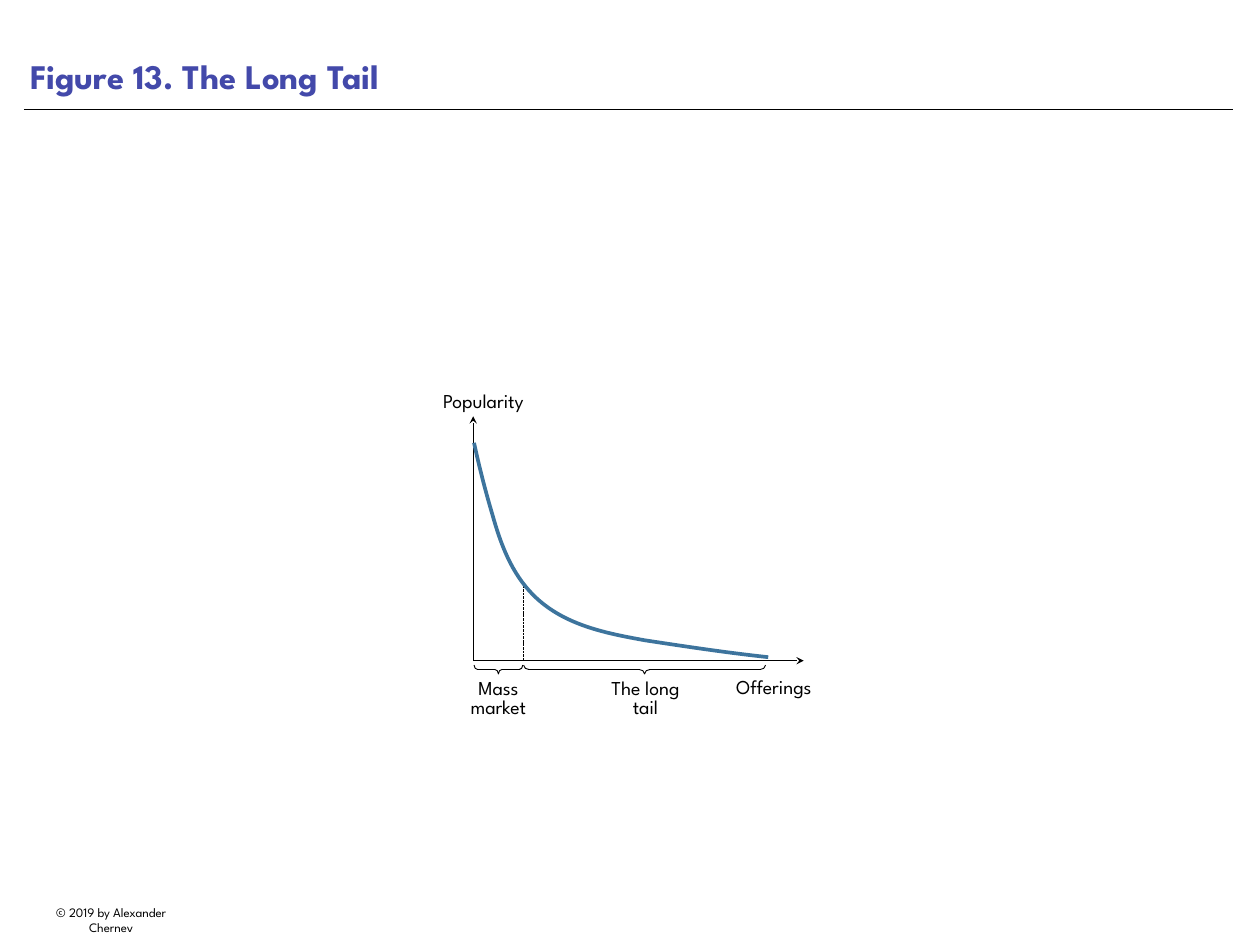
"""Build the long tail slide."""
from lxml.etree import SubElement
from pptx import Presentation
from pptx.dml.color import RGBColor
from pptx.enum.dml import MSO_LINE
from pptx.enum.shapes import MSO_CONNECTOR
from pptx.enum.text import MSO_ANCHOR, PP_ALIGN
from pptx.oxml.ns import qn
from pptx.util import Inches, Pt

COLORS = {"black": "000000", "title": "4349AA", "curve": "3D749D"}
FONT = "League Spartan"
TITLE = "Figure 13. The Long Tail"
COPYRIGHT = "© 2019 by Alexander Chernev"
LABELS = [
    ("Offerings", 8.09, 7.61, 1.07, 0.33, PP_ALIGN.RIGHT),
    ("Popularity", 4.86, 4.38, 1.19, 0.33, PP_ALIGN.CENTER),
    ("Mass market", 5.09, 7.62, 1.07, 0.56, PP_ALIGN.CENTER),
    ("The long tail", 6.75, 7.62, 1.07, 0.56, PP_ALIGN.CENTER),
]
ORIGIN = (5.34, 7.46)
AXIS_ENDS = [(5.34, 4.7), (9.07, 7.46)]
SPLIT = 5.91
CURVE_START = (8.67, 7.42)
CURVE_SEGMENTS = [
    [(8.2, 7.37), (7.74, 7.3), (7.28, 7.23)],
    [(6.84, 7.15), (6.36, 7.06), (6.02, 6.72)],
    [(5.77, 6.47), (5.65, 6.14), (5.56, 5.82)],
    [(5.48, 5.55), (5.41, 5.28), (5.35, 5)],
]
BRACES = [(SPLIT, 8.64, 0.06), (5.35, 5.9, 0.04)]
BRACE_TOP, BRACE_BAR, BRACE_TIP = 7.51, 7.56, 7.61


def color(name):
    return RGBColor.from_string(COLORS[name])


def brace_segments(left, right, radius):
    middle = (left + right) / 2
    bend = radius / 2
    return [
        [(right, BRACE_TOP + 0.03), (right - bend, BRACE_BAR), (right - radius, BRACE_BAR)],
        [(middle + radius, BRACE_BAR)],
        [(middle + bend, BRACE_BAR), (middle, BRACE_TIP - 0.03), (middle, BRACE_TIP)],
        [(middle, BRACE_TIP - 0.03), (middle - bend, BRACE_BAR), (middle - radius, BRACE_BAR)],
        [(left + radius, BRACE_BAR)],
        [(left + bend, BRACE_BAR), (left, BRACE_TOP + 0.03), (left, BRACE_TOP)],
    ]


def add_outline(slide, start, segments, color_name, width):
    points = [(Inches(x), Inches(y)) for segment in segments for x, y in segment]
    builder = slide.shapes.build_freeform(Inches(start[0]), Inches(start[1]), scale=1.0)
    builder.add_line_segments(points, close=False)
    shape = builder.convert_to_shape()
    steps = iter(list(shape.element.iter(qn("a:lnTo"))))
    for segment in segments:
        group = [next(steps) for _ in segment]
        if len(group) == 3:
            group[0].tag = qn("a:cubicBezTo")
            for step in group[1:]:
                group[0].append(step[0])
                step.getparent().remove(step)
    shape.shadow.inherit = False
    shape.fill.background()
    shape.line.color.rgb = color(color_name)
    shape.line.width = Pt(width)


def add_line(slide, start, end, width, arrow=False, dash=None):
    connector = slide.shapes.add_connector(
        MSO_CONNECTOR.STRAIGHT, *(Inches(value) for value in start + end))
    connector.line.color.rgb = color("black")
    connector.line.width = Pt(width)
    if dash:
        connector.line.dash_style = dash
    properties = connector.element.spPr
    if arrow:
        SubElement(properties.find(qn("a:ln")), qn("a:tailEnd"), type="stealth")
    SubElement(properties, qn("a:effectLst"))


def add_text(slide, text, left, top, width, height, align, size=16, color_name="black",
             bold=False, anchor=MSO_ANCHOR.MIDDLE, inset=(0, 0), wrap=True, spacing=None):
    box = slide.shapes.add_textbox(*(Inches(v) for v in (left, top, width, height)))
    frame = box.text_frame
    frame.word_wrap = wrap
    frame.vertical_anchor = anchor
    frame.margin_left = frame.margin_right = Inches(inset[0])
    frame.margin_top = frame.margin_bottom = Inches(inset[1])
    frame.text = text
    paragraph = frame.paragraphs[0]
    paragraph.alignment = align
    paragraph.line_spacing = spacing
    font = paragraph.runs[0].font
    font.name, font.size, font.bold = FONT, Pt(size), bold
    font.color.rgb = color(color_name)


def main():
    presentation = Presentation()
    presentation.slide_width, presentation.slide_height = Inches(14.22), Inches(10.67)
    slide = presentation.slides.add_slide(presentation.slide_layouts[6])
    add_text(slide, COPYRIGHT, 0.27, 10.16, 1.97, 0.28, PP_ALIGN.CENTER, size=10.5,
             anchor=MSO_ANCHOR.TOP, inset=(0.1, 0.05), wrap=False)
    add_line(slide, (0.27, 1.24), (13.92, 1.24), 0.5)
    add_text(slide, TITLE, 0.27, 0.01, 13.64, 1.15, PP_ALIGN.LEFT, size=28,
             color_name="title", bold=True, anchor=MSO_ANCHOR.BOTTOM, inset=(0.07, 0.07))
    for end in AXIS_ENDS:
        add_line(slide, ORIGIN, end, 1, arrow=True)
    add_line(slide, (SPLIT, 6.61), (SPLIT, ORIGIN[1]), 0.75, dash=MSO_LINE.SQUARE_DOT)
    add_outline(slide, CURVE_START, CURVE_SEGMENTS, "curve", 3)
    for left, right, radius in BRACES:
        add_outline(slide, (right, BRACE_TOP), brace_segments(left, right, radius),
                    "black", 0.75)
    for label in LABELS:
        add_text(slide, *label, spacing=0.8)
    presentation.save("out.pptx")


if __name__ == "__main__":
    main()
